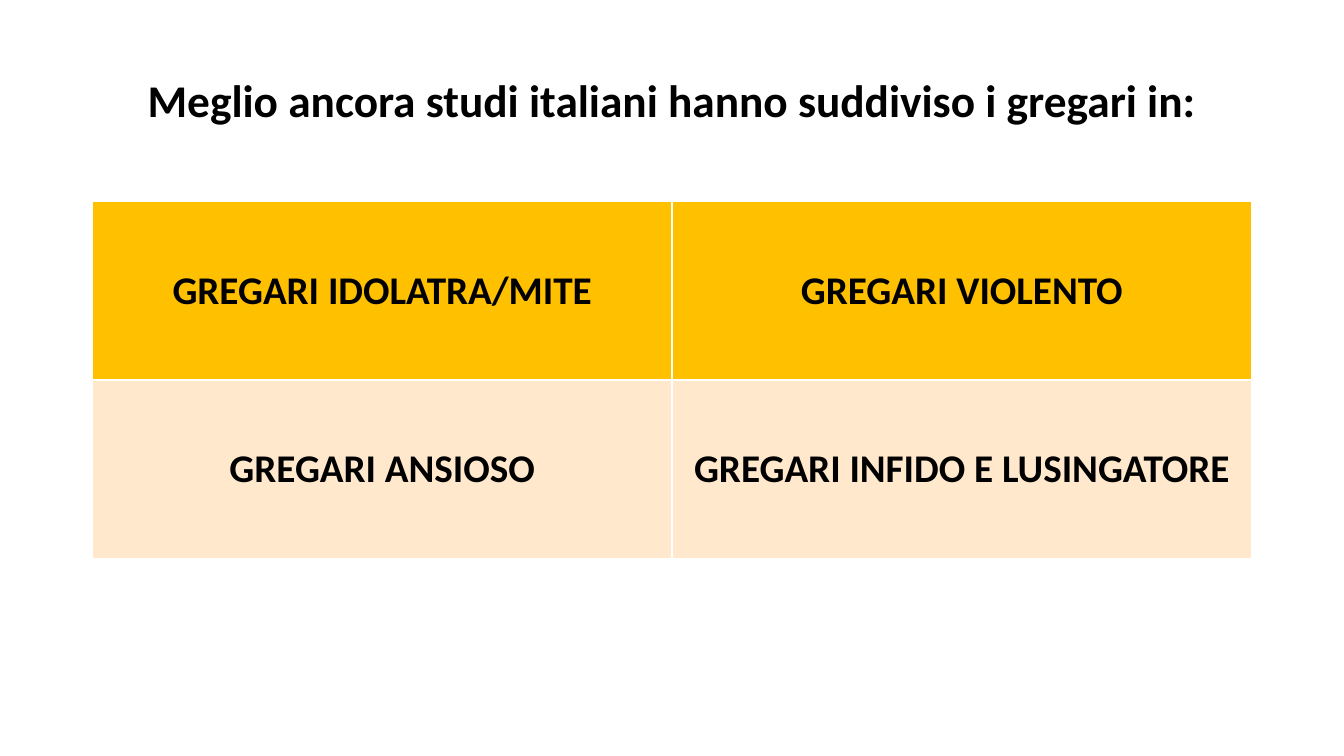
from pptx import Presentation
from pptx.dml.color import RGBColor as Rgb
from pptx.enum.text import MSO_ANCHOR as Anchor, PP_ALIGN as Align
from pptx.util import Pt

PX = 9525
HUES = {"ink": "000000", "gold": "FFC000", "peach": "FFE8CC"}
TYPES = [
    ("gold", ["GREGARI IDOLATRA/MITE", "GREGARI VIOLENTO"]),
    ("peach", ["GREGARI ANSIOSO", "GREGARI INFIDO E LUSINGATORE"]),
]


def write(frame, text, size):
    """Put one bold centred line into a text frame."""
    frame.text = text
    frame.word_wrap = True
    line = frame.paragraphs[0]
    line.alignment = Align.CENTER
    font = line.runs[0].font
    font.name, font.size, font.bold = "Calibri", Pt(size), True
    font.color.rgb = Rgb.from_string(HUES["ink"])
    return line


def add_title(slide, box, text):
    """Draw the heading in the given box."""
    frame = slide.shapes.add_textbox(*(n * PX for n in box)).text_frame
    frame.vertical_anchor = Anchor.MIDDLE
    write(frame, text, 32.4).line_spacing = 0.9


def add_types(slide, box, rows):
    """Draw the table of follower types in the given box."""
    size = len(rows), len(rows[0][1])
    table = slide.shapes.add_table(*size, *(n * PX for n in box)).table
    for r, (hue, names) in enumerate(rows):
        for c, name in enumerate(names):
            cell = table.cell(r, c)
            cell.fill.solid()
            cell.fill.fore_color.rgb = Rgb.from_string(HUES[hue])
            cell.vertical_anchor = Anchor.MIDDLE
            write(cell.text_frame, name, 28)


def main():
    """Build the slide and save it."""
    deck = Presentation()
    deck.slide_width, deck.slide_height = 1280 * PX, 720 * PX
    slide = deck.slides.add_slide(deck.slide_layouts[6])
    add_title(slide, (81, 68, 1118, 59),
              "Meglio ancora studi italiani hanno suddiviso i gregari in:")
    add_types(slide, (88, 192, 1104, 340), TYPES)
    deck.save("out.pptx")


if __name__ == "__main__":
    main()
